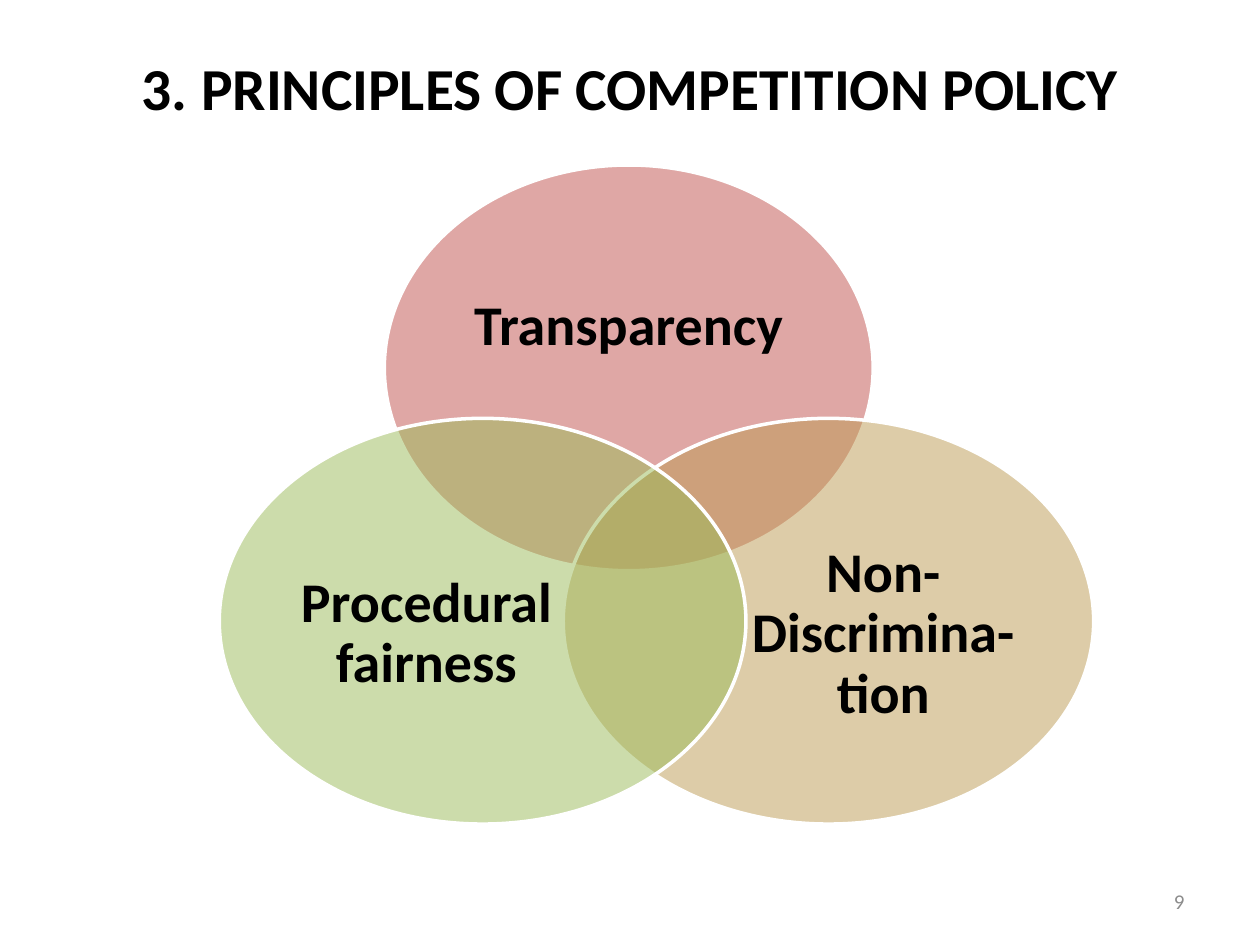
from dataclasses import dataclass

from lxml.etree import SubElement
from pptx import Presentation
from pptx.dml.color import RGBColor
from pptx.enum.shapes import MSO_SHAPE
from pptx.enum.text import MSO_ANCHOR, PP_ALIGN
from pptx.oxml.ns import qn
from pptx.slide import Slide
from pptx.util import Inches, Pt

BLACK = RGBColor(0x00, 0x00, 0x00)
WHITE = RGBColor(0xFF, 0xFF, 0xFF)
GREY = RGBColor(0x8C, 0x8C, 0x8C)
RED = RGBColor(0xC0, 0x50, 0x4D)
TAN = RGBColor(0xBD, 0x9B, 0x53)
GREEN = RGBColor(0x9B, 0xBB, 0x59)

Box = tuple[float, float, float, float]
SIDES = ("margin_left", "margin_top", "margin_right", "margin_bottom")


@dataclass
class Circle:
    text: str
    fill: RGBColor
    box: Box
    label: Box


# Back to front
CIRCLES = [
    Circle("Transparency", RED, (3.05, 1.31, 3.88, 3.22), (3.57, 1.87, 2.84, 1.45)),
    Circle("Non-Discrimina-tion", TAN, (4.47, 3.32, 4.21, 3.22), (5.75, 4.15, 2.52, 1.77)),
    Circle("Procedural fairness", GREEN, (1.74, 3.32, 4.18, 3.22), (2.13, 4.15, 2.51, 1.77)),
]


def add_text(slide: Slide, text: str, box: Box, size: int, color: RGBColor = BLACK,
             bold: bool = True, align: PP_ALIGN = PP_ALIGN.CENTER,
             space: float = 1.0, inset: bool = True) -> None:
    frame = slide.shapes.add_textbox(*map(Inches, box)).text_frame
    look = {"word_wrap": True, "vertical_anchor": MSO_ANCHOR.MIDDLE}
    if not inset:
        look |= dict.fromkeys(SIDES, Inches(0))
    for name, value in look.items():
        setattr(frame, name, value)
    para = frame.paragraphs[0]
    para.alignment = align
    para.line_spacing = space
    run = para.add_run()
    run.text = text
    for name, value in {"name": "Calibri", "size": Pt(size), "bold": bold}.items():
        setattr(run.font, name, value)
    run.font.color.rgb = color


def add_circle(slide: Slide, item: Circle) -> None:
    oval = slide.shapes.add_shape(MSO_SHAPE.OVAL, *map(Inches, item.box))
    oval.shadow.inherit = False
    oval.fill.solid()
    oval.fill.fore_color.rgb = item.fill
    # Half transparent fill
    tint = oval.fill._xPr.find(qn("a:solidFill")).find(qn("a:srgbClr"))
    SubElement(tint, qn("a:alpha"), val="50000")
    oval.line.color.rgb = WHITE
    oval.line.width = Pt(2)
    add_text(slide, item.text, item.label, 32, space=0.9, inset=False)


def main() -> None:
    deck = Presentation()
    deck.slide_width, deck.slide_height = Inches(10), Inches(7.5)
    slide = deck.slides.add_slide(deck.slide_layouts[6])

    # Title
    add_text(slide, "3. PRINCIPLES OF COMPETITION POLICY", (0.5, 0.3, 9, 0.77), 34)

    # Venn diagram
    for item in CIRCLES:
        add_circle(slide, item)

    # Page number
    add_text(slide, "9", (7.17, 6.95, 2.33, 0.4), 12, GREY, False, PP_ALIGN.RIGHT)

    deck.save("out.pptx")


if __name__ == "__main__":
    main()
